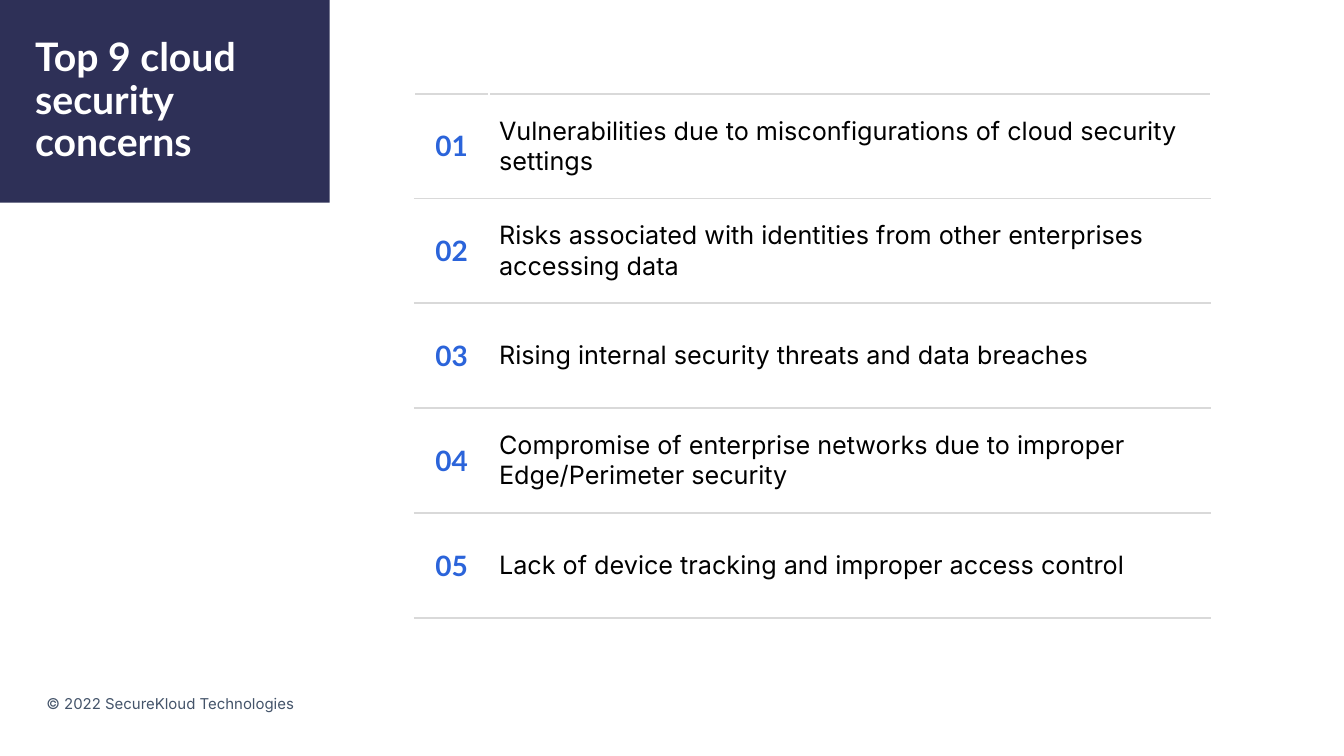
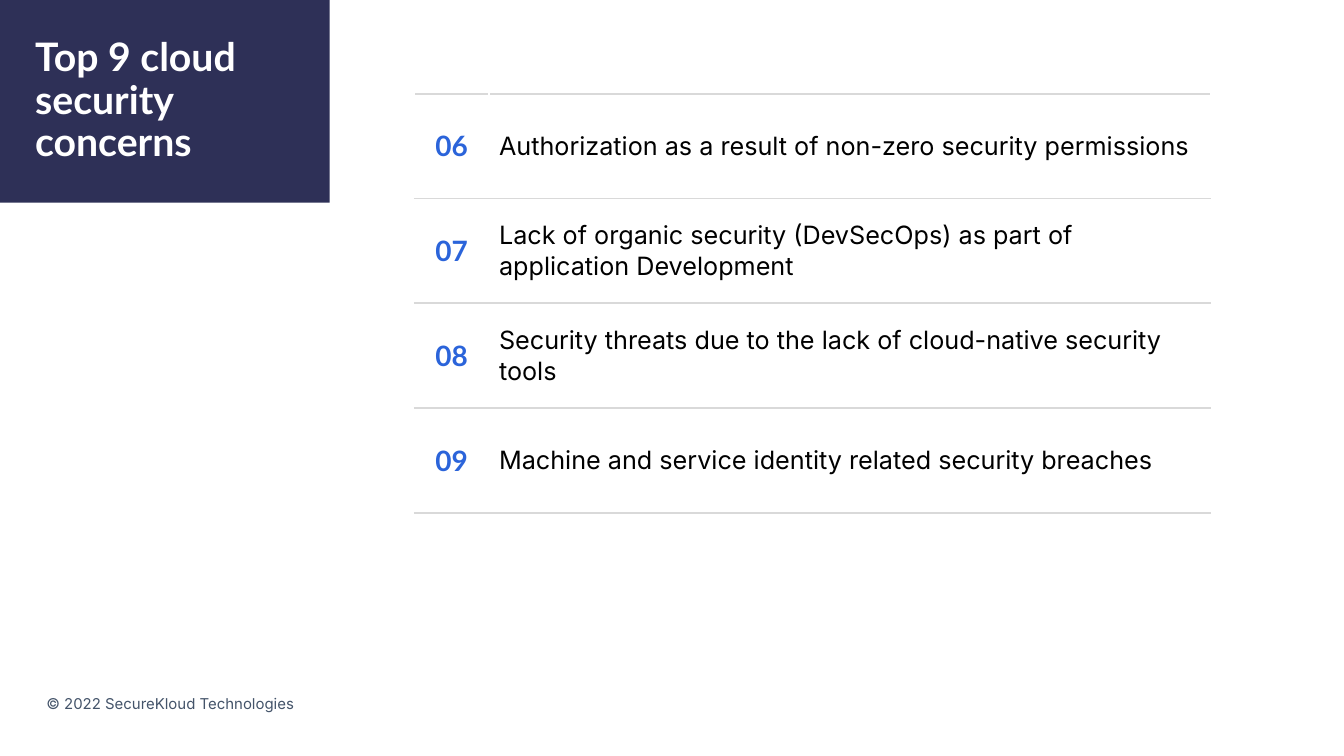
import dataclasses

import pptx
import pptx.dml.color
import pptx.enum.shapes
import pptx.enum.text
import pptx.oxml
import pptx.oxml.ns
import pptx.util

Inches = pptx.util.Inches
Pt = pptx.util.Pt
MIDDLE = pptx.enum.text.MSO_ANCHOR.MIDDLE
ALIGN = pptx.enum.text.PP_ALIGN


@dataclasses.dataclass(frozen=True)
class Theme:
    navy: str = "2E3057"
    blue: str = "2B64DA"
    slate: str = "44546A"
    gray: str = "D9D9D9"
    white: str = "FFFFFF"
    black: str = "000000"
    head: str = "Lato"
    body: str = "Inter"
    title: float = 28
    number: float = 20
    text: float = 18
    foot: float = 10.7
    rule: float = 1.5
    side: float = 1


THEME = Theme()
TITLE = "Top 9 cloud security concerns"
FOOT = "© 2022 SecureKloud Technologies"
PAGES = [
    [
        "Vulnerabilities due to misconfigurations of cloud security settings",
        "Risks associated with identities from other enterprises\naccessing data",
        "Rising internal security threats and data breaches",
        "Compromise of enterprise networks due to improper Edge/Perimeter security",
        "Lack of device tracking and improper access control",
    ],
    [
        "Authorization as a result of non-zero security permissions",
        "Lack of organic security (DevSecOps) as part of application Development",
        "Security threats due to the lack of cloud-native security tools",
        "Machine and service identity related security breaches",
    ],
]
COLS = [0.74, 7.16]
ROW = 1.04


def tint(code):
    return pptx.dml.color.RGBColor.from_string(code)


def apply(target, style):
    for key, value in style.items():
        setattr(target, key, value)


def write(frame, text, font, color, para):
    frame.text = text
    for line in frame.paragraphs:
        apply(line, para)
        apply(line.font, font)
        line.font.color.rgb = tint(color)


def paint(shape, color):
    shape.fill.solid()
    shape.fill.fore_color.rgb = tint(color)


def add_band(slide):
    rect = pptx.enum.shapes.MSO_SHAPE.RECTANGLE
    band = slide.shapes.add_shape(rect, 0, 0, Inches(3.27), Inches(2.01))
    band.shadow.inherit = False
    band.line.fill.background()
    paint(band, THEME.navy)


def add_text(slide, text, place, font, color, para, frame=None):
    box = slide.shapes.add_textbox(*map(Inches, place)).text_frame
    apply(box, {"word_wrap": True, "vertical_anchor": MIDDLE, **(frame or {})})
    write(box, text, font, color, para)


def add_frame(slide):
    add_band(slide)
    add_text(
        slide, FOOT, (0.46, 6.85, 2.6, 0.22),
        {"name": THEME.body, "size": Pt(THEME.foot)}, THEME.slate,
        {"line_spacing": 1.25},
        dict.fromkeys(("margin_left", "margin_top", "margin_right", "margin_bottom"), 0),
    )
    add_text(
        slide, TITLE, (0.25, 0.28, 2.81, 1.45),
        {"name": THEME.head, "size": Pt(THEME.title), "bold": True}, THEME.white,
        {"line_spacing": 0.9},
    )


def add_edge(cell, side, width, color):
    space = pptx.oxml.ns.nsdecls("a")
    cell._tc.get_or_add_tcPr().append(pptx.oxml.parse_xml(
        f'<a:ln{side} {space} w="{Pt(width)}"><a:solidFill>'
        f'<a:srgbClr val="{color}"/></a:solidFill></a:ln{side}>'
    ))


def fill_cell(cell, text, font, color, align):
    for side in "LR":
        add_edge(cell, side, THEME.side, THEME.white)
    for side in "TB":
        add_edge(cell, side, THEME.rule, THEME.gray)
    paint(cell, THEME.white)
    cell.vertical_anchor = MIDDLE
    write(cell.text_frame, text, font, color, {"alignment": align})


def add_list(slide, items, start):
    size = map(Inches, (4.11, 0.93, sum(COLS), ROW * len(items)))
    table = slide.shapes.add_table(len(items), len(COLS), *size).table
    apply(table, {"first_row": False, "horz_banding": False})
    for col, width in zip(table.columns, COLS):
        col.width = Inches(width)
    number = {"name": THEME.head, "size": Pt(THEME.number), "bold": True}
    text = {"name": THEME.body, "size": Pt(THEME.text), "bold": False}
    for row, item in enumerate(items):
        table.rows[row].height = Inches(ROW)
        fill_cell(table.cell(row, 0), f"{start + row:02}", number, THEME.blue, ALIGN.CENTER)
        fill_cell(table.cell(row, 1), item, text, THEME.black, ALIGN.LEFT)


def main():
    deck = pptx.Presentation()
    apply(deck, {"slide_width": Inches(13.33), "slide_height": Inches(7.5)})
    start = 1
    for items in PAGES:
        slide = deck.slides.add_slide(deck.slide_layouts[6])
        add_frame(slide)
        add_list(slide, items, start)
        start += len(items)
    deck.save("out.pptx")


if __name__ == "__main__":
    main()
